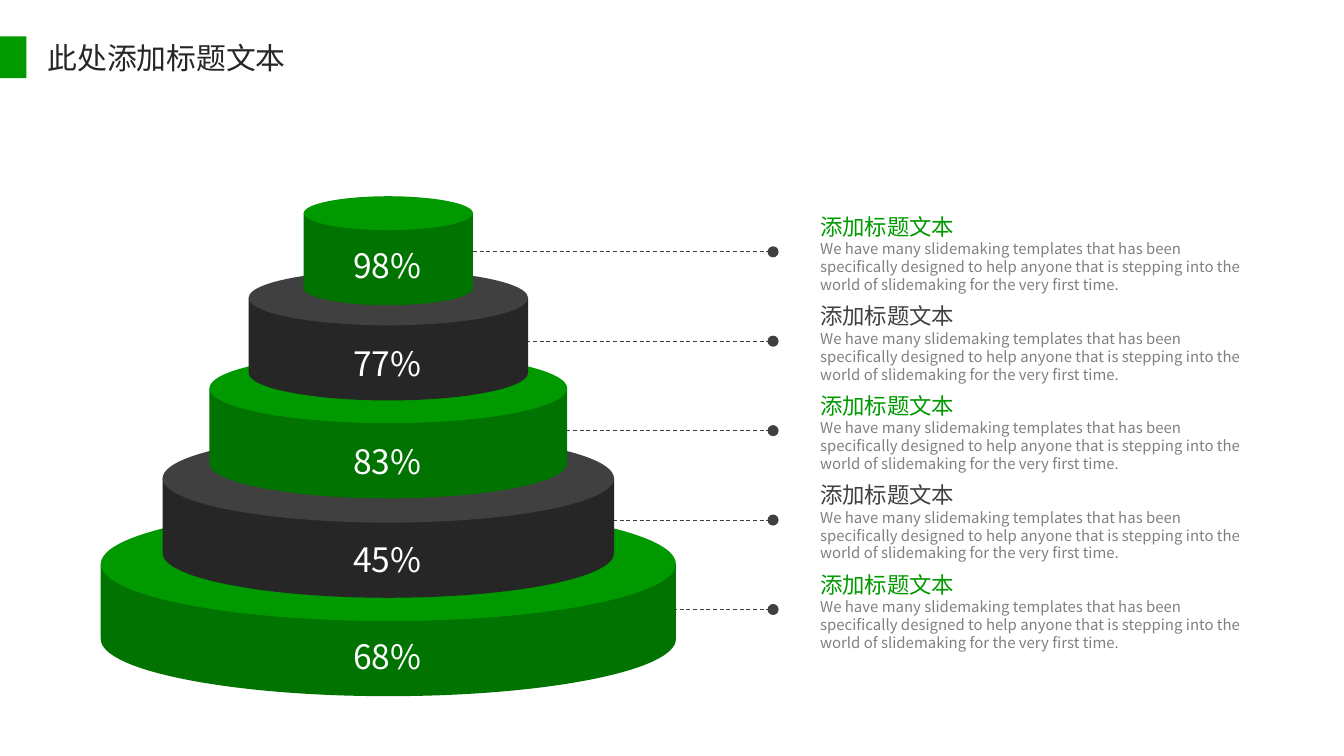
import lxml.etree
import pptx
import pptx.dml.color
import pptx.enum.dml
import pptx.enum.shapes
import pptx.enum.text
import pptx.oxml.ns
import pptx.util

Cm = pptx.util.Cm
qn = pptx.oxml.ns.qn

GREEN, DARK_GREEN = "009900", "007300"
GRAY, DARK_GRAY = "404040", "262626"
LIGHT_GRAY, WHITE = "808080", "FFFFFF"

HEADING = "添加标题文本"
BODY = ("We have many slidemaking templates that has been specifically designed "
        "to help anyone that is stepping into the world of slidemaking for the "
        "very first time.")


def color(value):
    return pptx.dml.color.RGBColor.from_string(value)


def write(paragraph, text, *, font, size, fill, align=None):
    """Add a formatted run to a paragraph."""
    run = paragraph.add_run()
    run.text = text
    run.font.size = pptx.util.Pt(size)
    run.font.color.rgb = color(fill)
    run.font.name = font
    east_asian = lxml.etree.SubElement(run._r.get_or_add_rPr(), qn("a:ea"))
    east_asian.set("typeface", font)
    if align is not None:
        paragraph.alignment = align


def bend(segment, *points):
    """Turn a straight freeform segment into a Bézier curve."""
    curve = lxml.etree.Element(qn("a:cubicBezTo"))
    for x, y in points:
        point = lxml.etree.SubElement(curve, qn("a:pt"))
        point.set("x", str(int(x)))
        point.set("y", str(int(y)))
    segment.getparent().replace(segment, curve)


class SlideBuilder:
    """Holds the style and the current slide; lengths are in centimetres."""

    font = "Noto Sans CJK SC"

    def __init__(self, slide):
        self.slide = slide

    def paint(self, shape, fill):
        shape.shadow.inherit = False
        shape.fill.solid()
        shape.fill.fore_color.rgb = color(fill)
        shape.line.fill.background()

    def rectangle(self, left, top, width, height, fill):
        shape = self.slide.shapes.add_shape(
            pptx.enum.shapes.MSO_SHAPE.RECTANGLE,
            Cm(left), Cm(top), Cm(width), Cm(height))
        self.paint(shape, fill)

    def text_box(self, left, top, width, height, lines, align=None):
        """Each line is (text, size, colour) and becomes one paragraph."""
        shape = self.slide.shapes.add_textbox(
            Cm(left), Cm(top), Cm(width), Cm(height))
        frame = shape.text_frame
        frame.word_wrap = True
        frame.auto_size = pptx.enum.text.MSO_AUTO_SIZE.SHAPE_TO_FIT_TEXT
        frame.margin_left = frame.margin_right = 0
        frame.margin_top = frame.margin_bottom = 0
        for index, (text, size, fill) in enumerate(lines):
            paragraph = frame.add_paragraph() if index else frame.paragraphs[0]
            write(paragraph, text, font=self.font, size=size, fill=fill, align=align)

    def leader(self, start, end, y):
        """Dashed horizontal line that ends in a dot."""
        connector = self.slide.shapes.add_connector(
            pptx.enum.shapes.MSO_CONNECTOR.STRAIGHT,
            Cm(start), Cm(y), Cm(end), Cm(y))
        connector.line.color.rgb = color(GRAY)
        connector.line.width = pptx.util.Pt(0.5)
        connector.line.dash_style = pptx.enum.dml.MSO_LINE.DASH
        line = connector.line._get_or_add_ln()
        lxml.etree.SubElement(line, qn("a:tailEnd")).set("type", "oval")
        lxml.etree.SubElement(connector._element.spPr, qn("a:effectLst"))

    def tier(self, center, top, width, height, side, top_fill, side_fill):
        """Disc: a curved side wall below an elliptical top face."""
        shapes = self.slide.shapes.add_group_shape().shapes
        left, middle = center - width / 2, top + height / 2
        right, floor = left + width, middle + side
        outline = shapes.build_freeform(Cm(left), Cm(middle))
        outline.add_line_segments([
            (Cm(left), Cm(floor)), (Cm(center), Cm(floor + height / 2)),
            (Cm(right), Cm(floor)), (Cm(right), Cm(middle))], close=True)
        wall = outline.convert_to_shape()
        self.paint(wall, side_fill)

        # Round the bottom with two quarter ellipses
        across, down = wall.width, wall.height
        edge = Cm(side)
        reach_x, reach_y = 0.55 * across / 2, 0.55 * (down - edge)
        _, left_half, right_half, _ = wall._element.findall(".//" + qn("a:lnTo"))
        bend(left_half, (0, edge + reach_y), (across / 2 - reach_x, down),
             (across / 2, down))
        bend(right_half, (across / 2 + reach_x, down), (across, edge + reach_y),
             (across, edge))

        face = shapes.add_shape(
            pptx.enum.shapes.MSO_SHAPE.OVAL,
            Cm(left), Cm(top), Cm(width), Cm(height))
        self.paint(face, top_fill)


def main():
    presentation = pptx.Presentation()
    presentation.slide_width, presentation.slide_height = Cm(25.4), Cm(14.29)
    builder = SlideBuilder(presentation.slides.add_slide(presentation.slide_layouts[6]))

    # Tiers from top to bottom:
    # share, face top, face width, face height, label width, leader start
    tiers = [
        ("98%", 3.71, 3.2, 0.64, 1.96, 8.69),
        ("77%", 5.11, 5.28, 1.04, 2.74, 8.94),
        ("83%", 6.68, 6.76, 1.32, 2.74, 8.94),
        ("45%", 8.2, 8.53, 1.68, 2.74, 8.94),
        ("68%", 9.58, 10.87, 2.16, 2.74, 8.94),
    ]
    palettes = [(GREEN, DARK_GREEN), (GRAY, DARK_GRAY)]
    rows = [(4.76 + 1.69 * index, palettes[index % 2], tier)
            for index, tier in enumerate(tiers)]

    # Leader lines
    for y, _, tier in rows:
        builder.leader(tier[-1], 14.61, y)

    # Stacked discs, lowest first
    for _, palette, (_, top, width, height, _, _) in reversed(rows):
        builder.tier(7.34, top, width, height, 1.42, *palette)

    # Shares
    for index, (share, _, _, _, width, _) in enumerate(tiers):
        builder.text_box(7.32 - width / 2, 4.63 + 1.85 * index, width, 0.76,
                         [(share, 18, WHITE)], pptx.enum.text.PP_ALIGN.CENTER)

    # Descriptions
    for y, (accent, _), _ in rows:
        builder.text_box(15.5, y - 0.73, 8, 1.55,
                         [(HEADING, 12, accent), (BODY, 8, LIGHT_GRAY)])

    # Slide title
    builder.rectangle(0, 0.69, 0.5, 0.79, GREEN)
    builder.text_box(0.9, 0.75, 7.72, 0.69, [("此处添加标题文本", 16, DARK_GRAY)])

    presentation.save("out.pptx")


if __name__ == "__main__":
    main()
